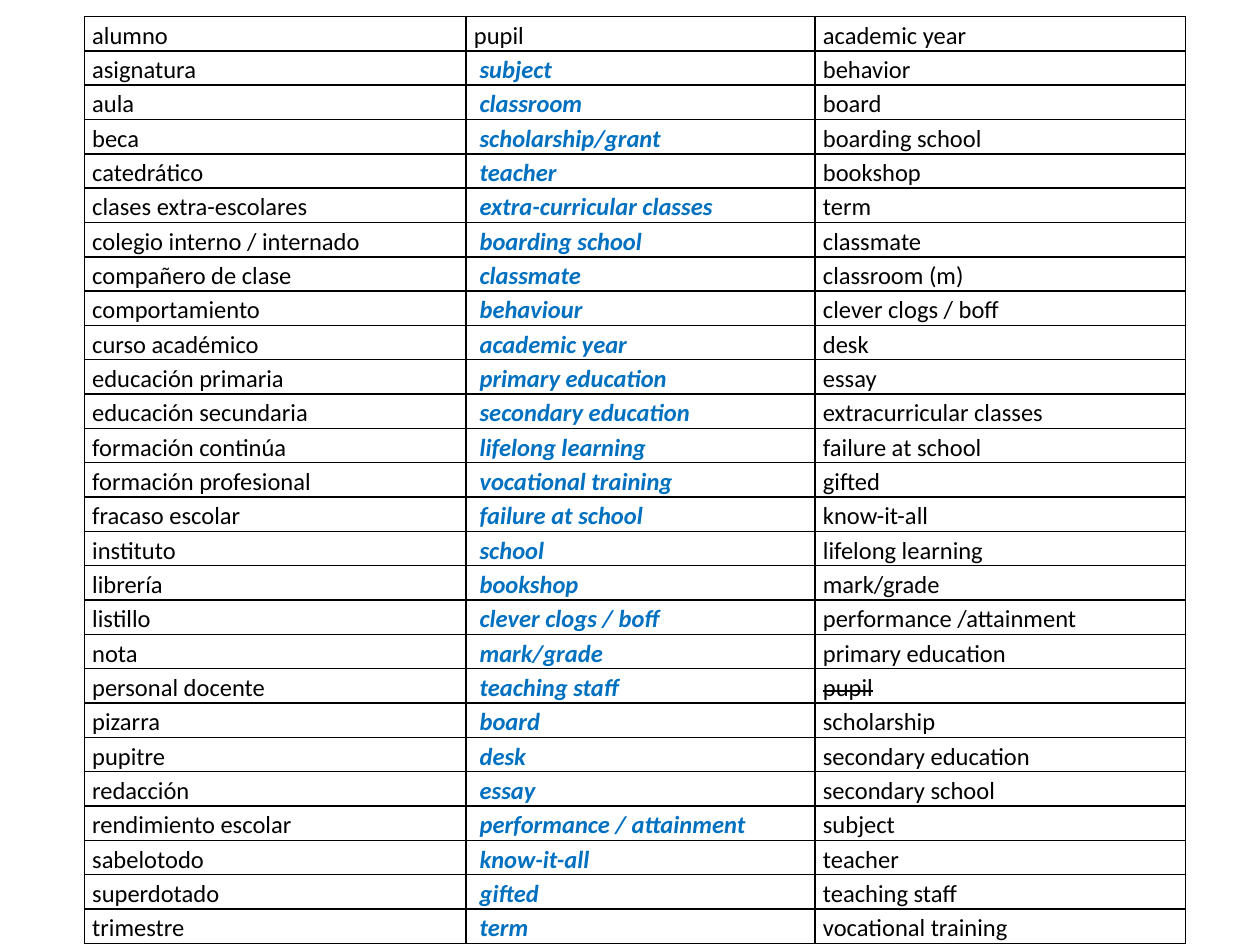
from lxml.etree import SubElement
from pptx import Presentation
from pptx.dml.color import RGBColor
from pptx.enum.text import MSO_ANCHOR
from pptx.oxml.ns import qn
from pptx.util import Pt

BLACK = RGBColor(0x00, 0x00, 0x00)
ANSWER_BLUE = RGBColor(0x00, 0x70, 0xC0)

COLUMN_WIDTHS = (218.2, 199.4, 211.7)
CELL_MARGIN = 4.5
ANSWER_MARGIN = 7.7

# Spanish term, English translation, word bank
VOCABULARY = [
    ("alumno", "pupil", "academic year"),
    ("asignatura", "subject", "behavior"),
    ("aula", "classroom", "board"),
    ("beca", "scholarship/grant", "boarding school"),
    ("catedrático", "teacher", "bookshop"),
    ("clases extra-escolares", "extra-curricular classes", "term"),
    ("colegio interno / internado", "boarding school", "classmate"),
    ("compañero de clase", "classmate", "classroom (m)"),
    ("comportamiento", "behaviour", "clever clogs / boff"),
    ("curso académico", "academic year", "desk"),
    ("educación primaria", "primary education", "essay"),
    ("educación secundaria", "secondary education", "extracurricular classes"),
    ("formación continúa", "lifelong learning", "failure at school"),
    ("formación profesional", "vocational training", "gifted"),
    ("fracaso escolar", "failure at school", "know-it-all"),
    ("instituto", "school", "lifelong learning"),
    ("librería", "bookshop", "mark/grade"),
    ("listillo", "clever clogs / boff", "performance /attainment"),
    ("nota", "mark/grade", "primary education"),
    ("personal docente", "teaching staff", "pupil"),
    ("pizarra", "board", "scholarship"),
    ("pupitre", "desk", "secondary education"),
    ("redacción", "essay", "secondary school"),
    ("rendimiento escolar", "performance / attainment", "subject"),
    ("sabelotodo", "know-it-all", "teacher"),
    ("superdotado", "gifted", "teaching staff"),
    ("trimestre", "term", "vocational training"),
]
EXAMPLE = VOCABULARY[0][1]


def write_text(cell, text, color=BLACK, bold=False, italic=False,
               strike=False, margin=CELL_MARGIN):
    cell.margin_left, cell.margin_right = Pt(margin), Pt(CELL_MARGIN)
    cell.margin_top = cell.margin_bottom = Pt(0)
    cell.vertical_anchor = MSO_ANCHOR.TOP
    paragraph = cell.text_frame.paragraphs[0]
    paragraph.line_spacing = 1.15
    run = paragraph.add_run()
    run.text = text
    font = run.font
    font.name, font.size = "Calibri", Pt(14)
    font.bold, font.italic = bold, italic
    font.color.rgb = color
    if strike:
        run._r.get_or_add_rPr().set("strike", "sngStrike")


def outline_cell(cell):
    """Give the cell black borders and no fill."""
    properties = cell._tc.get_or_add_tcPr()
    for side in ("a:lnL", "a:lnR", "a:lnT", "a:lnB"):
        border = SubElement(properties, qn(side), w=str(Pt(1)))
        fill = SubElement(border, qn("a:solidFill"))
        SubElement(fill, qn("a:srgbClr"), val=str(BLACK))
    cell.fill.background()


def add_vocabulary_table(slide, left, top, width, height):
    table = slide.shapes.add_table(
        len(VOCABULARY), len(COLUMN_WIDTHS),
        Pt(left), Pt(top), Pt(width), Pt(height)).table
    table.first_row = table.horz_banding = False
    for column, column_width in zip(table.columns, COLUMN_WIDTHS):
        column.width = Pt(column_width * width / sum(COLUMN_WIDTHS))

    for row, (spanish, english, bank_word) in zip(table.rows, VOCABULARY):
        spanish_cell, english_cell, bank_cell = row.cells
        write_text(spanish_cell, spanish)
        if english == EXAMPLE:
            write_text(english_cell, english)
        else:
            write_text(english_cell, english, color=ANSWER_BLUE, bold=True,
                       italic=True, margin=ANSWER_MARGIN)
        write_text(bank_cell, bank_word, strike=bank_word == EXAMPLE)
        for cell in row.cells:
            outline_cell(cell)


def main():
    presentation = Presentation()
    presentation.slide_width, presentation.slide_height = Pt(720), Pt(540)
    slide = presentation.slides.add_slide(presentation.slide_layouts[6])
    add_vocabulary_table(slide, 48.2, 9.4, 629.3, 522)
    presentation.save("out.pptx")


if __name__ == "__main__":
    main()
